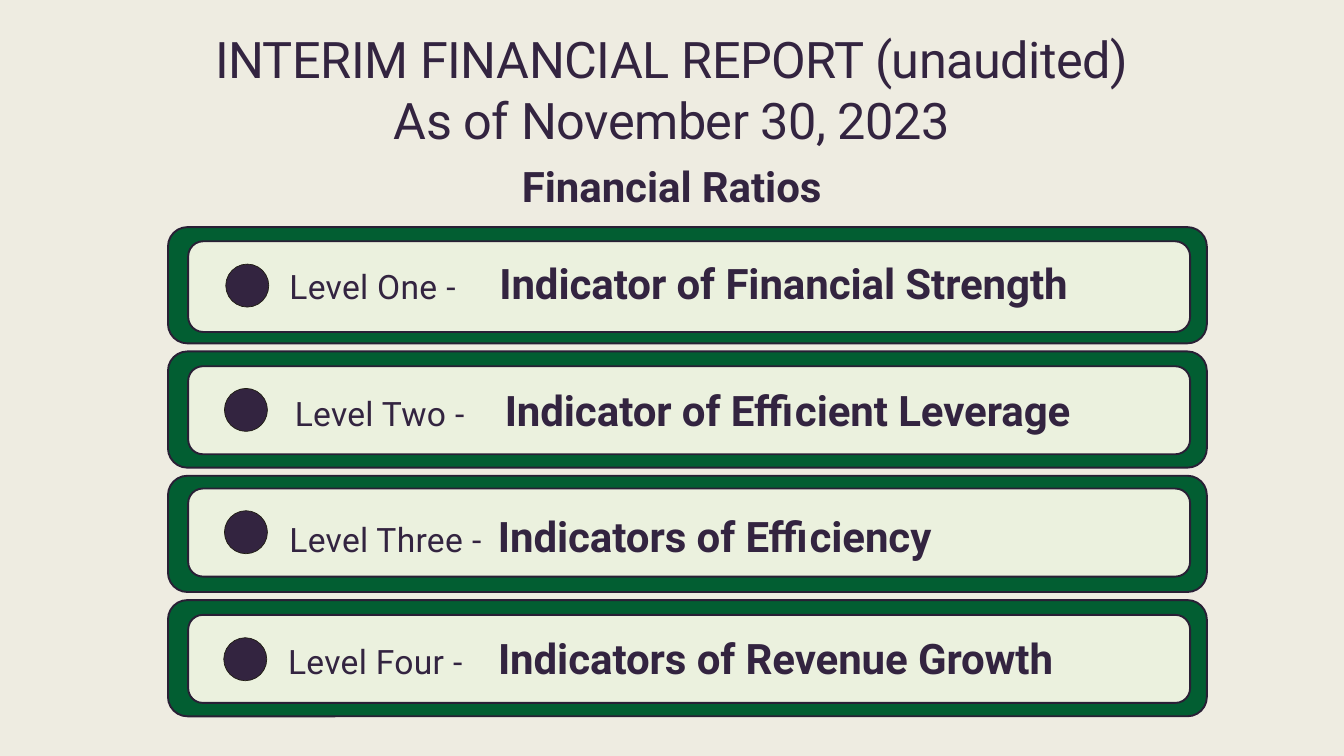
from pptx import Presentation
from pptx.dml.color import RGBColor
from pptx.enum.shapes import MSO_SHAPE
from pptx.enum.text import MSO_ANCHOR, MSO_AUTO_SIZE, PP_ALIGN
from pptx.util import Inches, Pt

ROUNDED, OVAL = MSO_SHAPE.ROUNDED_RECTANGLE, MSO_SHAPE.OVAL
TOP, CENTER = MSO_ANCHOR.TOP, PP_ALIGN.CENTER
GROW = MSO_AUTO_SIZE.SHAPE_TO_FIT_TEXT
TITLE_ONLY = 5

# Content
TITLE_LINES = ["INTERIM FINANCIAL REPORT (unaudited)", "As of November 30, 2023"]
SUBTITLE = "Financial Ratios"
# panel: top and height; dot: left and top; label: left, top and width
LEVELS = [
    {"name": "Level One ", "dash": "- \t ", "text": "Indicator of Financial Strength",
     "panel": (3.59, 1.35), "dot": (3.36, 3.93), "label": (4.21, 3.79, 13.34)},
    {"name": "Level Two ", "dash": "- \t ", "text": "Indicator of Efficient Leverage",
     "panel": (5.45, 1.31), "dot": (3.34, 5.78), "label": (4.29, 5.67, 12.37)},
    {"name": "Level Three ", "dash": "-  ", "text": "Indicators of Efficiency",
     "panel": (7.27, 1.31), "dot": (3.34, 7.6), "label": (4.21, 7.55, 13.5)},
    {"name": "Level Four ", "dash": "- \t ", "text": "Indicators of Revenue Growth",
     "panel": (9.15, 1.31), "dot": (3.33, 9.49), "label": (4.19, 9.36, 13.36)},
]

THEME = {
    "font": "Roboto",
    "background": "EEECE1", "ink": "332440", "frame": "025E32", "panel": "EBF1DE",
    "outline": "291F35", "dot_outline": "1E1C11",
    "title": 54, "strong": 45, "label": 36,
}

# Layout rules
FRAME_LEFT, FRAME_TOP, FRAME_WIDTH, FRAME_HEIGHT, FRAME_STEP = 2.5, 3.38, 15.46, 1.73, 1.85
PANEL_LEFT, PANEL_WIDTH = 2.8, 14.91
DOT_SIZE, LABEL_HEIGHT = 0.64, 0.86


def color(name):
    return RGBColor.from_string(THEME[name])


def add_span(para, text, size="label", bold=False, tracking=0):
    span = para.add_run()
    span.text = text
    span.font.name = THEME["font"]
    span.font.size = Pt(THEME[size])
    span.font.bold = bold
    span.font.color.rgb = color("ink")
    span._r.get_or_add_rPr().set("spc", str(round(tracking * 100)))


def add_block(page, kind, left, top, width, height, fill, outline="outline", weight=2):
    block = page.shapes.add_shape(kind, *map(Inches, (left, top, width, height)))
    block.shadow.inherit = False
    block.fill.solid()
    block.fill.fore_color.rgb = color(fill)
    block.line.color.rgb = color(outline)
    block.line.width = Pt(weight)


def add_title(page):
    title = page.shapes.title
    title.left, title.top, title.width, title.height = map(Inches, (2.5, 0.41, 14.99, 2.74))
    frame = title.text_frame
    frame.word_wrap = True
    frame.auto_size = MSO_AUTO_SIZE.NONE
    frame.vertical_anchor = TOP
    frame.margin_left = frame.margin_right = frame.margin_bottom = 0
    frame.margin_top = Inches(0.01)
    heading, subtitle = frame.paragraphs[0], frame.add_paragraph()
    for index, line in enumerate(TITLE_LINES):
        if index:
            heading.add_line_break()
        add_span(heading, line, size="title", tracking=-0.5)
    add_span(subtitle, SUBTITLE, size="strong", bold=True, tracking=-0.1)
    for para, space in ((heading, 1), (subtitle, 12)):
        para.alignment = CENTER
        para.space_before = Pt(space)


def add_level(page, index, level):
    # Green frame, pale panel and dot
    add_block(page, ROUNDED, FRAME_LEFT, FRAME_TOP + index * FRAME_STEP,
              FRAME_WIDTH, FRAME_HEIGHT, "frame")
    panel_top, panel_height = level["panel"]
    add_block(page, ROUNDED, PANEL_LEFT, panel_top, PANEL_WIDTH, panel_height, "panel")
    add_block(page, OVAL, *level["dot"], DOT_SIZE, DOT_SIZE, "ink", "dot_outline", 0.75)

    # Level name and indicator
    box = page.shapes.add_textbox(*map(Inches, (*level["label"], LABEL_HEIGHT)))
    box.text_frame.word_wrap = True
    box.text_frame.auto_size = GROW
    para = box.text_frame.paragraphs[0]
    para.space_before = Pt(5.8)
    add_span(para, level["name"], tracking=0.3)
    add_span(para, level["dash"])
    add_span(para, level["text"], size="strong", bold=True, tracking=-0.1)


def main():
    deck = Presentation()
    deck.slide_width, deck.slide_height = Inches(20), Inches(11.25)
    page = deck.slides.add_slide(deck.slide_layouts[TITLE_ONLY])
    page.background.fill.solid()
    page.background.fill.fore_color.rgb = color("background")
    add_title(page)
    for index, level in enumerate(LEVELS):
        add_level(page, index, level)
    deck.save("out.pptx")


if __name__ == "__main__":
    main()
